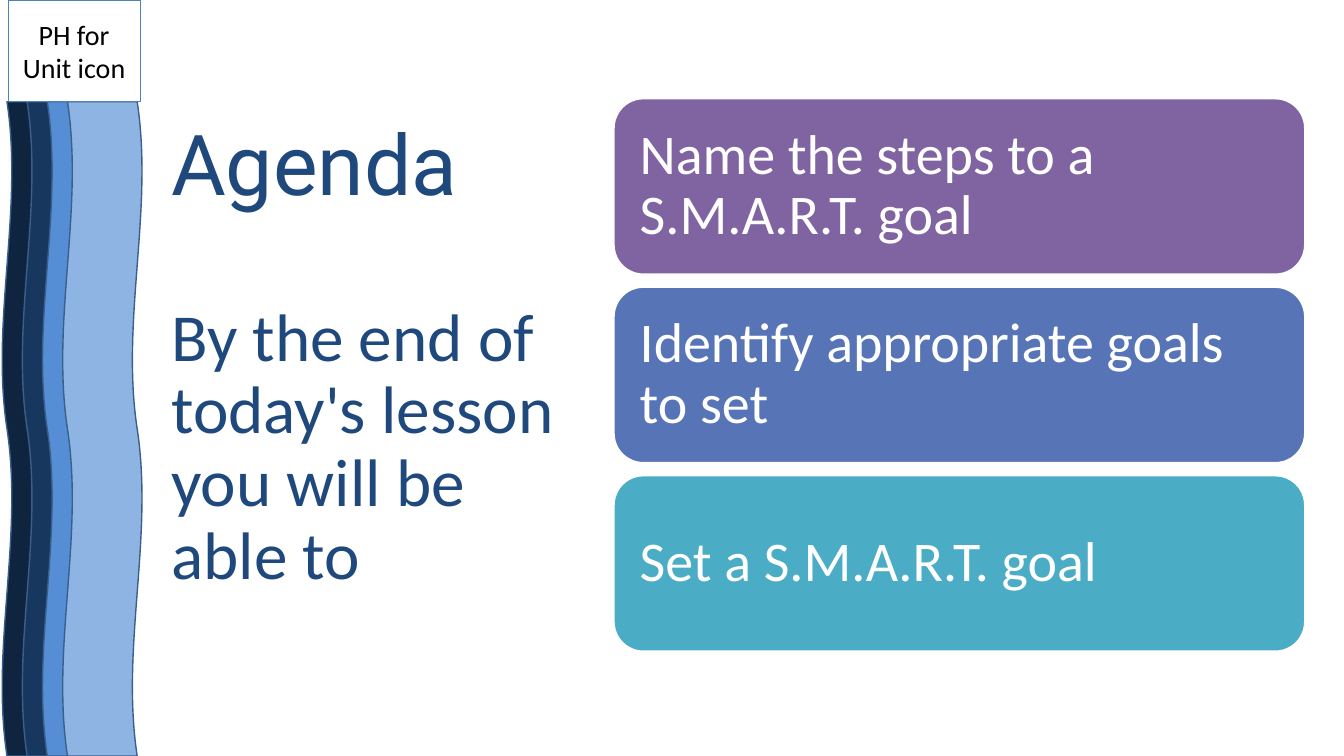
from dataclasses import dataclass

import pptx
import pptx.dml.color
import pptx.enum.shapes
import pptx.enum.text
import pptx.util
from pptx.util import Inches

MSO = pptx.enum.shapes.MSO_SHAPE
ALIGN = pptx.enum.text.PP_ALIGN
ANCHOR = pptx.enum.text.MSO_ANCHOR


@dataclass(frozen=True)
class Theme:
    """Colours, fonts and type sizes of the slide."""
    white: str = "FFFFFF"
    black: str = "000000"
    navy: str = "1F497D"
    wave_line: str = "3A5F8C"
    icon_line: str = "4F81BD"
    waves: tuple[str, ...] = ("0F243E", "17375E", "558ED5", "8EB4E3")
    cards: tuple[str, ...] = ("8064A2", "5674B6", "4BACC6")
    heading_font: str = "Roboto"
    body_font: str = "Calibri"
    heading_size: int = 60
    lead_size: int = 48
    card_size: int = 40
    icon_size: int = 20


@dataclass(frozen=True)
class Box:
    """A rectangle in inches."""
    left: float
    top: float
    width: float
    height: float

    def emu(self) -> tuple[int, ...]:
        """Return the rectangle as slide lengths."""
        return tuple(Inches(v) for v in (self.left, self.top, self.width, self.height))


@dataclass(frozen=True)
class Card:
    """One agenda goal and its colour."""
    text: str
    fill: str


THEME = Theme()
GOALS = (
    "Name the steps to a S.M.A.R.T. goal",
    "Identify appropriate goals to set",
    "Set a S.M.A.R.T. goal",
)
CARDS = [Card(text, fill) for text, fill in zip(GOALS, THEME.cards)]


def rgb(value: str) -> pptx.dml.color.RGBColor:
    """Turn a hex string into a colour."""
    return pptx.dml.color.RGBColor.from_string(value)


def add_shape(s, kind, box: Box, *, line: str, weight: float = 1,
              fill: str | None = None, rotation: float = 0):
    """Draw a preset shape without shadow."""
    sp = s.shapes.add_shape(kind, *box.emu())
    sp.shadow.inherit = False
    sp.rotation = rotation
    if fill:
        sp.fill.solid()
        sp.fill.fore_color.rgb = rgb(fill)
    else:
        sp.fill.background()
    sp.line.color.rgb = rgb(line)
    sp.line.width = pptx.util.Pt(weight)
    return sp


def set_frame(sp, *, anchor, inset: float | None = None):
    """Prepare the text frame of a shape and return it."""
    tf = sp.text_frame
    tf.word_wrap = True
    tf.vertical_anchor = anchor
    if inset is not None:
        tf.margin_left = tf.margin_right = Inches(inset)
        tf.margin_top = tf.margin_bottom = Inches(inset)
    return tf


def write(p, text: str, *, size: float, color: str, font: str = THEME.body_font,
          align=ALIGN.LEFT, spacing: float = 1.0, before: float = 0) -> None:
    """Put formatted text into a paragraph."""
    p.alignment = align
    p.line_spacing = spacing
    p.space_before = pptx.util.Pt(before)
    r = p.add_run()
    r.text = text
    r.font.name = font
    r.font.size = pptx.util.Pt(size)
    r.font.color.rgb = rgb(color)


def add_waves(s) -> None:
    """Draw the overlapping upright waves on the left edge."""
    for i, fill in enumerate(THEME.waves):
        add_shape(s, MSO.DOUBLE_WAVE, Box(-2.83 + 0.2 * i, 3.86, 6.49, 0.79),
                  line=THEME.wave_line, fill=fill, rotation=270)


def add_icon_box(s) -> None:
    """Draw the unit icon box above the waves."""
    sp = add_shape(s, MSO.RECTANGLE, Box(0.08, 0, 1.31, 1.01),
                   line=THEME.icon_line, weight=0.75)
    tf = set_frame(sp, anchor=ANCHOR.MIDDLE)
    write(tf.paragraphs[0], "PH for Unit icon", size=THEME.icon_size,
          color=THEME.black, align=ALIGN.CENTER)


def add_heading(s) -> None:
    """Write the heading and its lead-in sentence."""
    sp = s.shapes.add_textbox(*Box(1.6, 1.17, 4.16, 5.53).emu())
    tf = set_frame(sp, anchor=ANCHOR.TOP)
    write(tf.paragraphs[0], "Agenda", size=THEME.heading_size, color=THEME.navy,
          font=THEME.heading_font, spacing=0.9)
    write(tf.add_paragraph(), "By the end of today's lesson you will be able to",
          size=THEME.lead_size, color=THEME.navy, spacing=0.9, before=64)


def add_cards(s) -> None:
    """Stack the goal cards at an equal pitch."""
    for i, card in enumerate(CARDS):
        sp = add_shape(s, MSO.ROUNDED_RECTANGLE, Box(6.09, 0.98 + 1.87 * i, 6.85, 1.74),
                       line=THEME.white, fill=card.fill)
        tf = set_frame(sp, anchor=ANCHOR.MIDDLE, inset=0.17)
        write(tf.paragraphs[0], card.text, size=THEME.card_size,
              color=THEME.white, spacing=0.9)


def main() -> None:
    """Build and save the agenda slide."""
    prs = pptx.Presentation()
    prs.slide_width, prs.slide_height = Inches(13.33), Inches(7.5)
    s = prs.slides.add_slide(prs.slide_layouts[6])
    add_waves(s)
    add_icon_box(s)
    add_heading(s)
    add_cards(s)
    prs.save("out.pptx")


if __name__ == "__main__":
    main()
